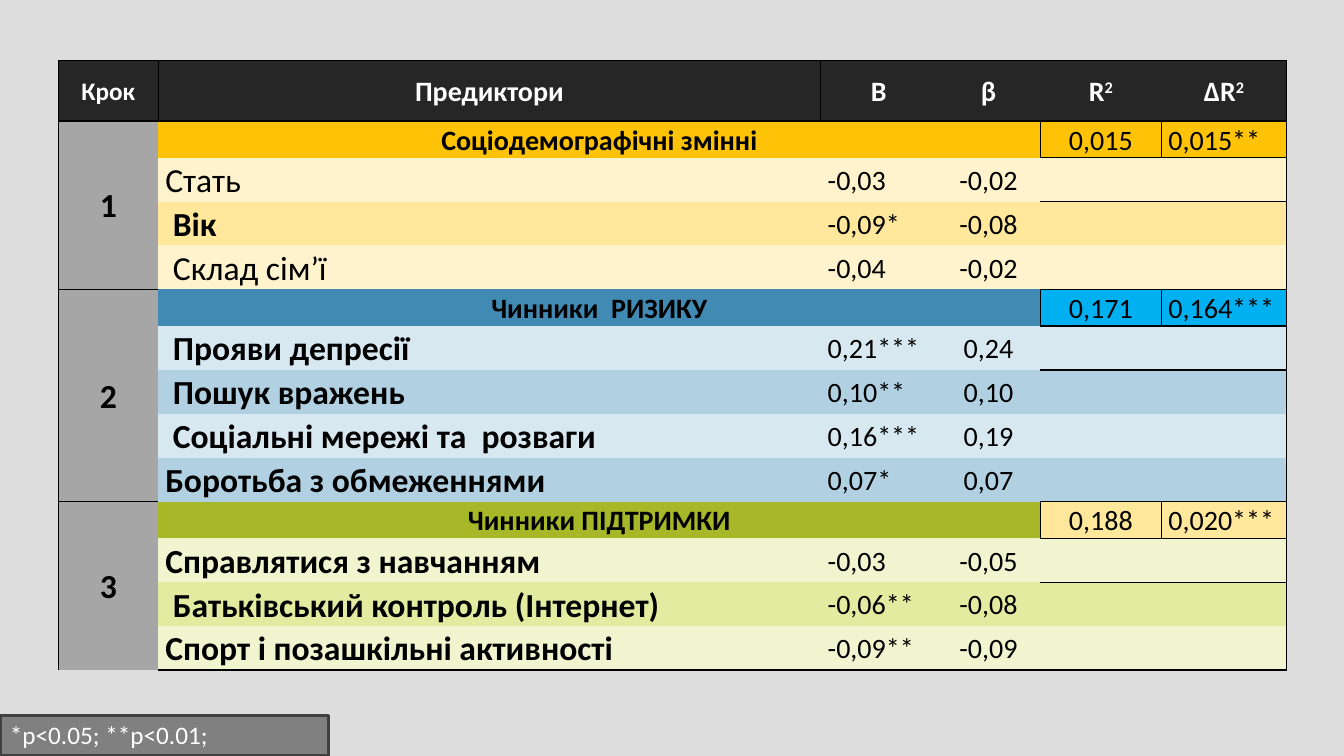
from lxml import etree
from pptx import Presentation
from pptx.dml.color import RGBColor
from pptx.enum.shapes import MSO_SHAPE
from pptx.enum.text import MSO_ANCHOR, PP_ALIGN
from pptx.oxml.ns import qn
from pptx.util import Inches, Pt

RECTANGLE = MSO_SHAPE.RECTANGLE
MIDDLE = MSO_ANCHOR.MIDDLE
LEFT, CENTER = PP_ALIGN.LEFT, PP_ALIGN.CENTER
NO_GRID = "{2D5ABB26-0587-4C30-8999-92F81FD0307C}"
BLACK, WHITE, HEADER, STEP = "000000", "FFFFFF", "262626", "A6A6A6"
COLUMN_WIDTHS = [0.99, 6.57, 1.15, 1.03, 1.2, 1.24]
HEADER_HEIGHT, BAND_HEIGHT, ROW_HEIGHT = 0.6, 0.36, 0.43

HEADINGS = ["Крок", "Предиктори", "B", "β", "R2", "ΔR2"]
SECTIONS = [
    {"title": "Соціодемографічні змінні", "fits": ["0,015", "0,015**"],
     "band": "FEC306", "fit_fill": "FEC306", "stripes": ["FFF3CD", "FFE79B"],
     "rows": [("Стать", "-0,03", "-0,02", False),
              (" Вік", "-0,09*", "-0,08", True),
              (" Склад сім’ї", "-0,04", "-0,02", False)]},
    {"title": "Чинники  РИЗИКУ", "fits": ["0,171", "0,164***"],
     "band": "418AB3", "fit_fill": "00B0F0", "stripes": ["D8E8F1", "B1D1E3"],
     "rows": [(" Прояви депресії", "0,21***", "0,24", True),
              (" Пошук вражень", "0,10**", "0,10", True),
              (" Соціальні мережі та  розваги", "0,16***", "0,19", True),
              ("Боротьба з обмеженнями", "0,07*", "0,07", True)]},
    {"title": "Чинники ПІДТРИМКИ", "fits": ["0,188", "0,020***"],
     "band": "A6B727", "fit_fill": "FFE79B", "stripes": ["F0F5D0", "E2EBA0"],
     "rows": [("Справлятися з навчанням", "-0,03", "-0,05", True),
              (" Батьківський контроль (Інтернет)", "-0,06**", "-0,08", True),
              ("Спорт і позашкільні активності", "-0,09**", "-0,09", True)]},
]


def rgb(value):
    return RGBColor.from_string(value)


class SlideBuilder:
    font = "Calibri"

    def __init__(self, slide, background):
        self.slide = slide
        slide.background.fill.solid()
        slide.background.fill.fore_color.rgb = rgb(background)

    def style_run(self, run, size, color, bold=False):
        run.font.name = self.font
        run.font.size = Pt(size)
        run.font.bold = bold
        run.font.color.rgb = rgb(color)

    def table(self, left, top, widths, heights):
        frame = self.slide.shapes.add_table(
            len(heights), len(widths), Inches(left), Inches(top),
            Inches(sum(widths)), Inches(sum(heights)))
        table = frame.table
        table.first_row = table.horz_banding = False
        frame._element.find(".//" + qn("a:tableStyleId")).text = NO_GRID
        for column, width in zip(table.columns, widths):
            column.width = Inches(width)
        for row, height in zip(table.rows, heights):
            row.height = Inches(height)
        return table

    def borders(self, cell, sides, bottom_width):
        properties = cell._tc.get_or_add_tcPr()
        for side in "LRTB":
            if side in sides:
                width = bottom_width if side == "B" else 1
                line = etree.SubElement(properties, qn("a:ln" + side), w=str(Pt(width)))
                fill = etree.SubElement(line, qn("a:solidFill"))
                etree.SubElement(fill, qn("a:srgbClr"), val=BLACK)

    def cell(self, cell, text, fill, sides="", size=20, color=BLACK, bold=False,
             align=CENTER, superscript="", bottom_width=1):
        self.borders(cell, sides, bottom_width)
        cell.fill.solid()
        cell.fill.fore_color.rgb = rgb(fill)
        cell.vertical_anchor = MIDDLE
        cell.margin_left = cell.margin_right = Inches(0.07)
        cell.margin_top = cell.margin_bottom = 0
        if not text:
            return
        cell.text_frame.text = text
        paragraph = cell.text_frame.paragraphs[0]
        paragraph.alignment = align
        paragraph.line_spacing = 1.07
        paragraph.space_after = Pt(8)
        if superscript:
            power = paragraph.add_run()
            power.text = superscript
            power._r.get_or_add_rPr().set("baseline", "30000")
        for run in paragraph.runs:
            self.style_run(run, size, color, bold)

    def panel(self, left, top, width, height, fill, line, line_width):
        panel = self.slide.shapes.add_shape(
            RECTANGLE, Inches(left), Inches(top), Inches(width), Inches(height))
        panel.shadow.inherit = False
        panel.fill.solid()
        panel.fill.fore_color.rgb = rgb(fill)
        panel.line.color.rgb = rgb(line)
        panel.line.width = Pt(line_width)

    def label(self, left, top, width, height, text, size, color):
        frame = self.slide.shapes.add_textbox(
            Inches(left), Inches(top), Inches(width), Inches(height)).text_frame
        frame.word_wrap = True
        frame.text = text
        self.style_run(frame.paragraphs[0].runs[0], size, color)


def fill_header(builder, table):
    for column, heading in enumerate(HEADINGS):
        sides = "TB" + ("LR" if column < 2 else "R" if column == 5 else "")
        squared = heading.endswith("2")
        builder.cell(table.cell(0, column), heading.removesuffix("2"), HEADER, sides,
                     size=20 if column else 18, color=WHITE, bold=True,
                     superscript="2" if squared else "",
                     bottom_width=2 if 1 <= column <= 3 else 1)


def fill_section(builder, table, step, section, first):
    final = first + len(section["rows"])
    is_last_step = step == len(SECTIONS)
    for row in range(first, final + 1):
        sides = "L" + ("T" if row == first and step < 3 else "")
        sides += "B" if row == final and is_last_step else ""
        builder.cell(table.cell(row, 0), str(step) if row == first else "",
                     STEP, sides, size=24, bold=True)
    table.cell(first, 0).merge(table.cell(final, 0))

    builder.cell(table.cell(first, 1), section["title"], section["band"], "R", bold=True)
    table.cell(first, 1).merge(table.cell(first, 3))
    fit, change = section["fits"]
    builder.cell(table.cell(first, 4), fit, section["fit_fill"],
                 "LTBR" if is_last_step else "LTB")
    builder.cell(table.cell(first, 5), change, section["fit_fill"],
                 "LTBR" if is_last_step else "TBR", align=LEFT)

    for offset, (predictor, b, beta, bold) in enumerate(section["rows"]):
        row = first + 1 + offset
        fill = section["stripes"][offset % 2]
        bottom = "B" if row == final and is_last_step else ""
        fit_sides = ("TB" if offset == 0 else "") + ("B" if row == final else "")
        builder.cell(table.cell(row, 1), predictor, fill, bottom, 24, bold=bold, align=LEFT)
        builder.cell(table.cell(row, 2), b, fill, bottom, align=LEFT)
        builder.cell(table.cell(row, 3), beta, fill, bottom)
        builder.cell(table.cell(row, 4), "", fill, fit_sides)
        builder.cell(table.cell(row, 5), "", fill, fit_sides + "R")
    return final + 1


def main():
    presentation = Presentation()
    presentation.slide_width, presentation.slide_height = Inches(13.33), Inches(7.5)
    slide = presentation.slides.add_slide(presentation.slide_layouts[6])
    builder = SlideBuilder(slide, "DDDDDD")

    heights = [HEADER_HEIGHT]
    for section in SECTIONS:
        heights += [BAND_HEIGHT] + [ROW_HEIGHT] * len(section["rows"])
    table = builder.table(0.58, 0.6, COLUMN_WIDTHS, heights)
    fill_header(builder, table)
    next_row = 1
    for step, section in enumerate(SECTIONS, 1):
        next_row = fill_section(builder, table, step, section, next_row)

    builder.panel(0, 7.1, 3.26, 0.4, "808080", "404040", 2.5)
    builder.label(0, 7.09, 3.39, 0.4, "*p<0.05; **p<0.01; ***p<0.001", 18, WHITE)
    presentation.save("out.pptx")


if __name__ == "__main__":
    main()
